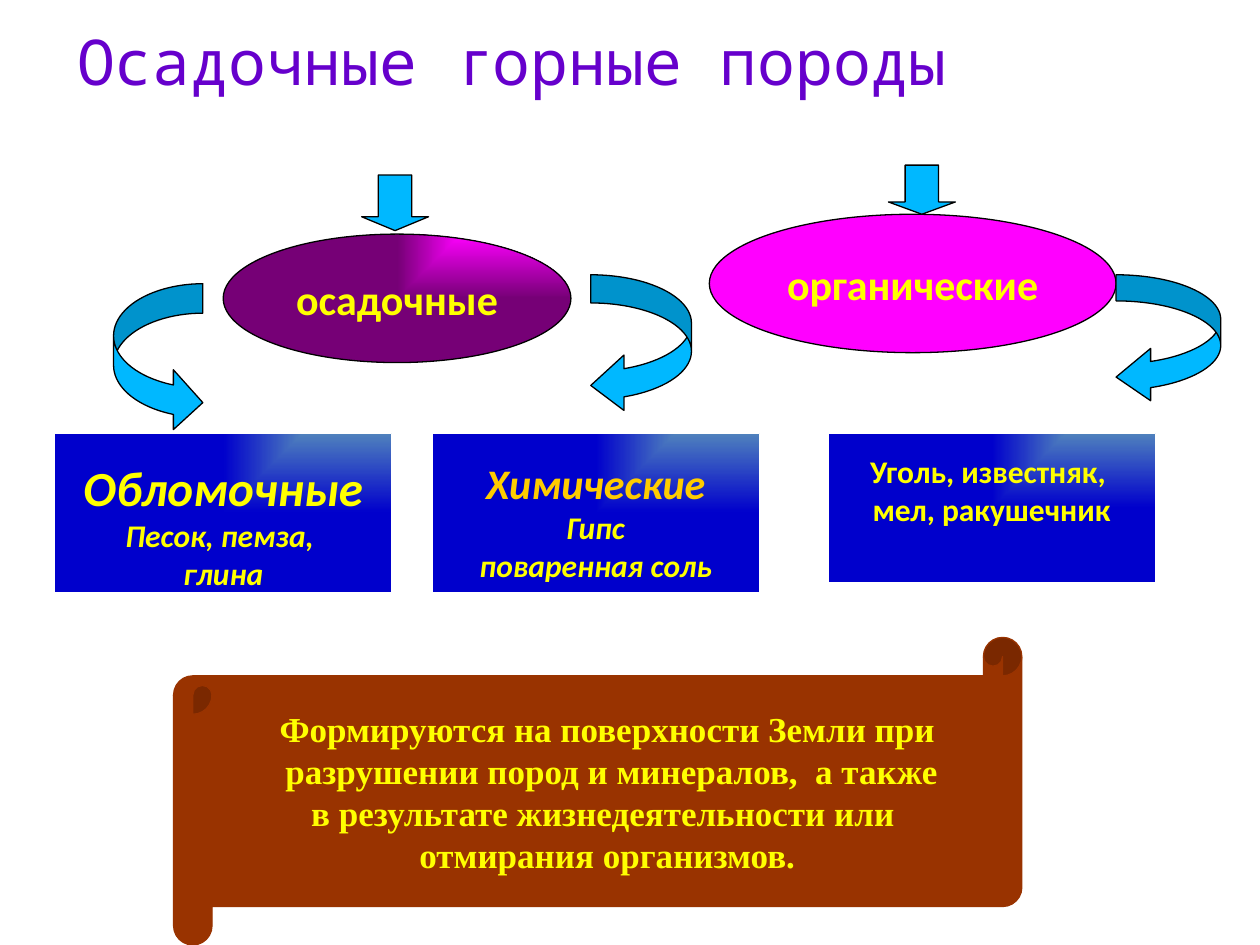
from lxml import etree
from pptx import Presentation
from pptx.dml.color import RGBColor
from pptx.enum.shapes import MSO_SHAPE
from pptx.enum.text import MSO_ANCHOR, PP_ALIGN
from pptx.oxml.ns import qn
from pptx.util import Cm, Pt

OVAL = MSO_SHAPE.OVAL
RECT = MSO_SHAPE.RECTANGLE
SCROLL = MSO_SHAPE.HORIZONTAL_SCROLL
DOWN = MSO_SHAPE.DOWN_ARROW
RIGHT = MSO_SHAPE.CURVED_RIGHT_ARROW
LEFT = MSO_SHAPE.CURVED_LEFT_ARROW
TOP = MSO_ANCHOR.TOP
MIDDLE = MSO_ANCHOR.MIDDLE
CENTER = PP_ALIGN.CENTER
START = PP_ALIGN.LEFT

YELLOW = "FFFF00"
BLACK = "000000"
WHITE = "FFFFFF"
BROWN = "993300"
PINK = "FF00FF"
SKY = "00B8FF"
BLUES = ("4F81BD", "0000CC")
PURPLES = (PINK, "760076")


def color(code):
    return RGBColor.from_string(code)


def add_run(para, text, size, tint=YELLOW, face="Calibri", bold=True, slant=False):
    run = para.add_run()
    run.text = text
    font = run.font
    font.name = face
    font.size = Pt(size)
    font.bold = bold
    font.italic = slant
    font.color.rgb = color(tint)


def add_title(slide, text):
    title = slide.shapes.title
    title.left, title.top = Cm(1.3), Cm(0.33)
    title.width, title.height = Cm(22.86), Cm(3.81)
    frame = title.text_frame
    frame.word_wrap = False
    frame.vertical_anchor = TOP
    para = frame.paragraphs[0]
    para.alignment = START
    add_run(para, text, 36, "6600CC", "Noto Sans Mono", False)


def add_shape(slide, kind, box, fill, line=BLACK, bends=()):
    shape = slide.shapes.add_shape(kind, *[Cm(n) for n in box])
    shape.shadow.inherit = False
    shape.line.color.rgb = color(line)
    shape.line.width = Pt(0.75)
    for i, bend in enumerate(bends):
        shape.adjustments[i] = bend
    if isinstance(fill, tuple):
        blend(shape, fill)
    else:
        shape.fill.solid()
        shape.fill.fore_color.rgb = color(fill)
    return shape


def blend(shape, pair):
    shape.fill.gradient()
    for stop, code in zip(shape.fill.gradient_stops, pair):
        stop.color.rgb = color(code)
    grad = shape._element.spPr.find(qn("a:gradFill"))
    grad.remove(grad.find(qn("a:lin")))
    route = etree.SubElement(grad, qn("a:path"), path="rect")
    etree.SubElement(route, qn("a:fillToRect"), l="100000", b="100000")


def add_lines(shape, lines, inset=None, **style):
    frame = shape.text_frame
    frame.word_wrap = False
    frame.vertical_anchor = MIDDLE
    if inset is not None:
        frame.vertical_anchor = TOP
        frame.margin_top = Cm(inset)
    for i, (text, size, tint) in enumerate(lines):
        para = frame.add_paragraph() if i else frame.paragraphs[0]
        para.alignment = CENTER
        add_run(para, text, size, tint, **style)


def add_card(slide, box, lines, inset, slant):
    card = add_shape(slide, RECT, box, BLUES, WHITE)
    add_lines(card, lines, inset, slant=slant)


def add_oval(slide, box, fill, text):
    oval = add_shape(slide, OVAL, box, fill)
    add_lines(oval, [(text, 24, YELLOW)])


def add_scroll(slide, box, lines):
    scroll = add_shape(slide, SCROLL, box, BROWN, BROWN, [0.125])
    add_lines(scroll, [(text, 20, YELLOW) for text in lines], face="Times New Roman")


def main():
    deck = Presentation()
    deck.slide_width, deck.slide_height = Cm(25.4), Cm(19.05)
    slide = deck.slides.add_slide(deck.slide_layouts[5])
    add_title(slide, "Осадочные горные породы")

    add_oval(slide, (4.5, 4.72, 7.01, 2.59), PURPLES, "осадочные")
    add_oval(slide, (14.3, 4.32, 8.2, 2.79), PINK, "органические")

    add_card(slide, (1.1, 8.74, 6.8, 3.2), [
        ("Обломочные", 28, YELLOW),
        ("Песок, пемза, ", 18, YELLOW),
        ("глина", 18, YELLOW),
    ], 0.48, True)
    add_card(slide, (8.71, 8.74, 6.6, 3.2), [
        ("Химические", 24, "FFCC00"),
        ("Гипс", 18, YELLOW),
        ("поваренная соль", 18, YELLOW),
    ], 0.48, True)
    add_card(slide, (16.69, 8.74, 6.6, 3), [
        ("Уголь, известняк, ", 18, YELLOW),
        ("мел, ракушечник", 18, YELLOW),
    ], 0.38, False)

    add_scroll(slide, (3.5, 12.85, 17.1, 6.2), [
        "Формируются на поверхности Земли при",
        " разрушении пород и минералов,  а также",
        "в результате жизнедеятельности или ",
        "отмирания организмов.",
    ])

    arrows = [
        (DOWN, (7.29, 3.53, 1.35, 1.12), (0.5, 0.25)),
        (DOWN, (17.91, 3.33, 1.35, 0.99), (0.5, 0.25)),
        (RIGHT, (2.29, 5.72, 1.8, 3), (0.33, 0.67, 0.33)),
        (LEFT, (11.91, 5.54, 2.03, 2.79), (0.28, 0.55, 0.33)),
        (LEFT, (22.5, 5.54, 2.11, 2.59), (0.25, 0.5, 0.33)),
    ]
    for kind, box, bends in arrows:
        add_shape(slide, kind, box, SKY, bends=bends)

    deck.save("out.pptx")


if __name__ == "__main__":
    main()
